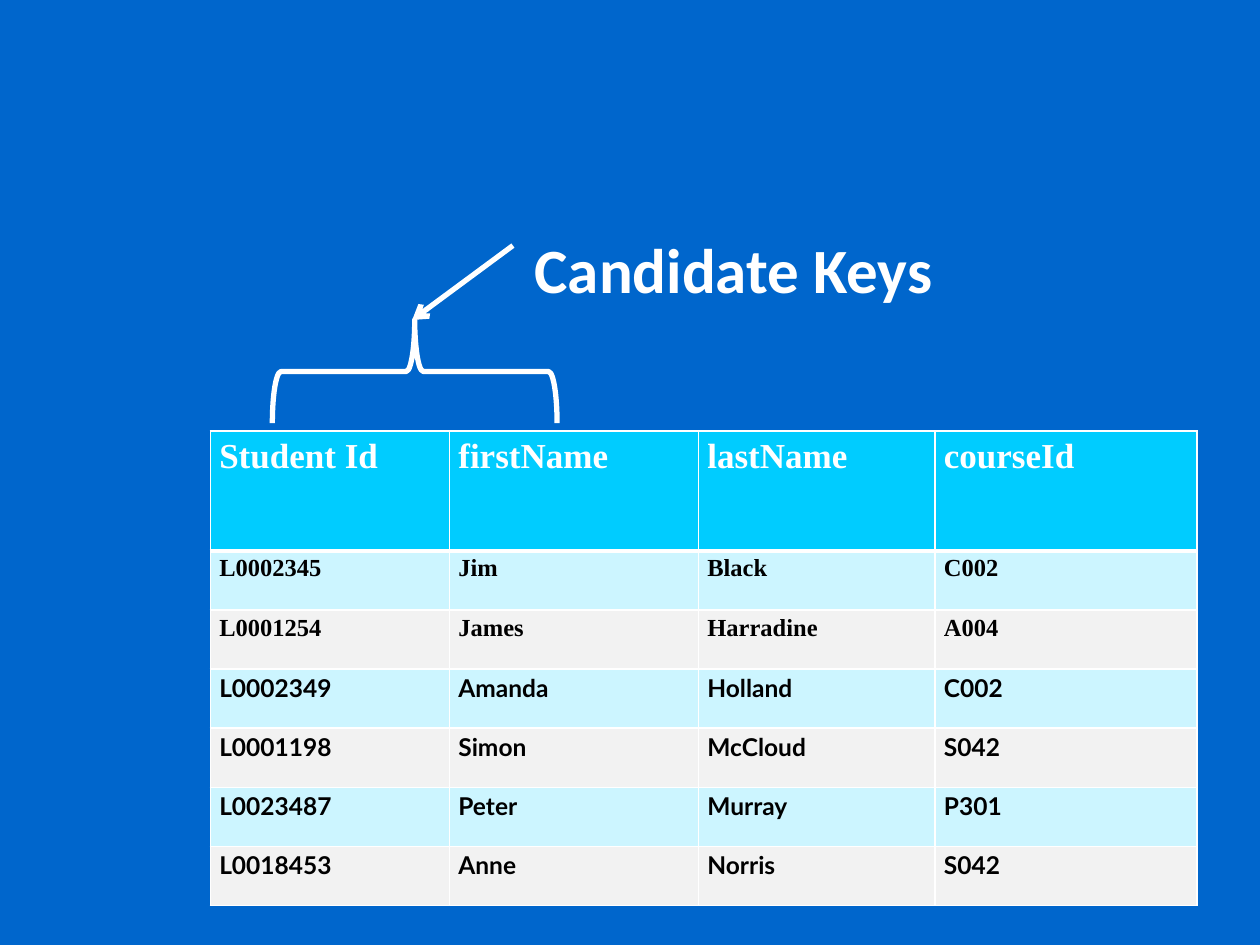
from lxml import etree
from pptx import Presentation
from pptx import util as u
from pptx.dml.color import RGBColor
from pptx.enum import shapes, text
from pptx.oxml.ns import qn

WHITE = "FFFFFF"


def colour(value):
    return RGBColor.from_string(value)


def set_font(para, **values):
    para.line_spacing = 1.15
    color = values.pop("color")
    for name, value in values.items():
        setattr(para.font, name, value)
    para.font.color.rgb = colour(color)


deck = Presentation()
deck.slide_width, deck.slide_height = u.Cm(25.4), u.Cm(19.05)
page = deck.slides.add_slide(deck.slide_layouts[6])
page.background.fill.solid()
page.background.fill.fore_color.rgb = colour("0066CC")

# Student table
rows = [
    ("Student Id", "firstName", "lastName", "courseId"),
    ("L0002345", "Jim", "Black", "C002"),
    ("L0001254", "James", "Harradine", "A004"),
    ("L0002349", "Amanda", "Holland", "C002"),
    ("L0001198", "Simon", "McCloud", "S042"),
    ("L0023487", "Peter", "Murray", "P301"),
    ("L0018453", "Anne", "Norris", "S042"),
]
widths = [4.82, 5.02, 4.77, 5.28]
heights = [2.42] + [1.19] * 6
table = page.shapes.add_table(
    len(rows), len(widths), u.Cm(4.24), u.Cm(8.69),
    u.Cm(sum(widths)), u.Cm(sum(heights))).table
for column, width in zip(table.columns, widths):
    column.width = u.Cm(width)
for row, height in zip(table.rows, heights):
    row.height = u.Cm(height)

margins = {"margin_left": u.Cm(0.18), "margin_right": u.Cm(0.18),
           "margin_top": 0, "margin_bottom": 0}
for r, values in enumerate(rows):
    header = r == 0
    fill = "00CCFF" if header else ("F2F2F2", "CCF5FF")[r % 2]
    for c, value in enumerate(values):
        cell = table.cell(r, c)
        for name, margin in margins.items():
            setattr(cell, name, margin)
        properties = cell._tc.get_or_add_tcPr()
        for side in "LRTB":
            heavy = (r, side) in ((0, "B"), (1, "T"))
            border = etree.SubElement(properties, qn(f"a:ln{side}"),
                                      w=str(u.Pt(3 if heavy else 1)))
            solid = etree.SubElement(border, qn("a:solidFill"))
            etree.SubElement(solid, qn("a:srgbClr"), val=WHITE)
        cell.fill.solid()
        cell.fill.fore_color.rgb = colour(fill)
        cell.text = value
        set_font(cell.text_frame.paragraphs[0],
                 name="Times New Roman" if r < 3 else "Lato",
                 size=u.Pt(20 if header else 14), bold=True,
                 color=WHITE if header else "000000")

# Arrow from the label to the tip of the brace
arrow = page.shapes.add_connector(
    shapes.MSO_CONNECTOR.STRAIGHT,
    u.Cm(10.34), u.Cm(4.95), u.Cm(8.31), u.Cm(6.45))
arrow._element.spPr.append(etree.Element(qn("a:effectLst")))

# Brace over the first two columns
brace = page.shapes.add_shape(
    shapes.MSO_SHAPE.LEFT_BRACE, u.Cm(7.32), u.Cm(4.62), u.Cm(2.08), u.Cm(5.74))
brace.rotation = 90
brace.shadow.inherit = False
brace.fill.background()

for shape in (arrow, brace):
    shape.line.color.rgb = colour(WHITE)
    shape.line.width = u.Pt(3)
etree.SubElement(arrow.line._get_or_add_ln(), qn("a:tailEnd"), type="arrow")

# Label
label = page.shapes.add_textbox(u.Cm(10.34), u.Cm(4.29), u.Cm(8.71), u.Cm(1.57))
label.text_frame.word_wrap = False
para = label.text_frame.paragraphs[0]
para.text = "Candidate Keys"
para.alignment = text.PP_ALIGN.RIGHT
para.space_after = u.Pt(10)
set_font(para, name="Calibri", size=u.Pt(36), bold=True, color=WHITE)

deck.save("out.pptx")
